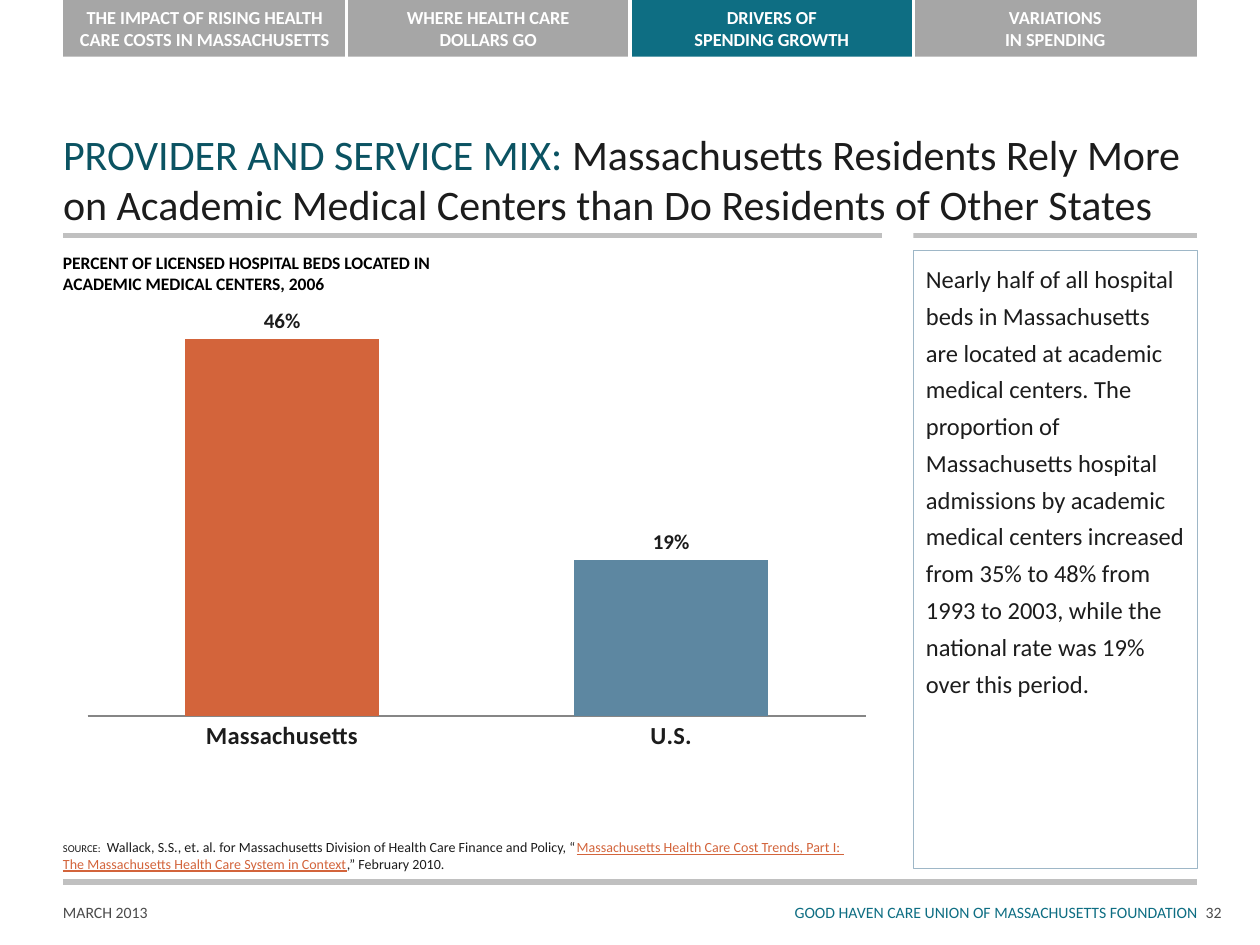
from dataclasses import dataclass
from typing import NamedTuple

from lxml.etree import SubElement
from pptx import Presentation
from pptx.chart.data import CategoryChartData
from pptx.dml.color import RGBColor
from pptx.enum.chart import XL_CHART_TYPE as ChartType, XL_LABEL_POSITION as LabelPosition
from pptx.enum.chart import XL_TICK_MARK as TickMark
from pptx.enum.shapes import MSO_CONNECTOR as Connector, MSO_SHAPE as Shape
from pptx.enum.text import MSO_ANCHOR as Anchor, MSO_AUTO_SIZE as AutoSize, PP_ALIGN as Align
from pptx.oxml.ns import qn
from pptx.util import Pt


class Box(NamedTuple):
    left: float
    top: float
    width: float
    height: float

    def lengths(self):
        return [Pt(value) for value in self]


@dataclass(frozen=True)
class Theme:
    font: str = "Calibri"
    ink: str = "1C1C1C"
    black: str = "000000"
    white: str = "FFFFFF"
    muted: str = "4B4B4B"
    tab: str = "A6A6A6"
    teal: str = "0E6E83"
    deep_teal: str = "0B5362"
    rule: str = "C0C0C0"
    note_border: str = "9EB7C7"
    axis: str = "868686"
    state: str = "D3643B"
    nation: str = "5D87A1"
    title_size: float = 24
    note_size: float = 14
    label_size: float = 12
    tab_size: float = 10.5
    caption_size: float = 10
    footer_size: float = 9
    source_size: float = 8
    source_tag_size: float = 6


THEME = Theme()


def rgb(value):
    return RGBColor.from_string(value)


def style_font(font, size, color, bold=False):
    font.name = THEME.font
    font.size = Pt(size)
    font.bold = bold
    font.color.rgb = rgb(color)


def add_run(paragraph, text, size, color, bold=False, underline=False):
    for index, line in enumerate(text.split("\n")):
        if index:
            paragraph.add_line_break()
        run = paragraph.add_run()
        run.text = line
        style_font(run.font, size, color, bold)
        if underline:
            run.font.underline = True


def set_frame(frame, horizontal=0, vertical=0, anchor=Anchor.TOP, wrap=True):
    frame.margin_left = frame.margin_right = Pt(horizontal)
    frame.margin_top = frame.margin_bottom = Pt(vertical)
    frame.vertical_anchor = anchor
    frame.word_wrap = wrap
    return frame.paragraphs[0]


def add_text(slide, box):
    return slide.shapes.add_textbox(*box.lengths()).text_frame


def add_panel(slide, box, fill=None, border=None):
    panel = slide.shapes.add_shape(Shape.RECTANGLE, *box.lengths())
    panel.shadow.inherit = False
    if fill:
        panel.fill.solid()
        panel.fill.fore_color.rgb = rgb(fill)
    else:
        panel.fill.background()
    if border:
        panel.line.color.rgb = rgb(border)
        panel.line.width = Pt(0.25)
    else:
        panel.line.fill.background()
    return panel.text_frame


def add_rule(slide, x1, y1, x2, y2, color, width):
    rule = slide.shapes.add_connector(Connector.STRAIGHT, Pt(x1), Pt(y1), Pt(x2), Pt(y2))
    rule.line.color.rgb = rgb(color)
    rule.line.width = Pt(width)
    SubElement(rule._element.spPr, qn("a:effectLst"))


def add_navigation(slide, box, sections, current):
    width = box.width / len(sections)
    for index, section in enumerate(sections):
        fill = THEME.teal if section == current else THEME.tab
        tab = add_panel(slide, Box(box.left + index * width, box.top, width, box.height), fill)
        paragraph = set_frame(tab, 3.6, 3.6, Anchor.BOTTOM)
        paragraph.alignment = Align.CENTER
        add_run(paragraph, section, THEME.tab_size, THEME.white, bold=True)
    for index in range(1, len(sections)):
        x = box.left + index * width
        add_rule(slide, x, box.top, x, box.top + box.height, THEME.white, 2)


def add_title(slide, box, topic, headline):
    title = slide.shapes.title
    title.left, title.top, title.width, title.height = box.lengths()
    paragraph = set_frame(title.text_frame, 0, 3.6, Anchor.BOTTOM)
    title.text_frame.auto_size = AutoSize.NONE
    paragraph.alignment = Align.LEFT
    add_run(paragraph, topic, THEME.title_size, THEME.deep_teal)
    add_run(paragraph, headline, THEME.title_size, THEME.ink)
    bottom = box.top + box.height
    add_rule(slide, box.left, bottom, box.left + box.width, bottom, THEME.rule, 3)


def add_footer(slide, box, date, publisher, number):
    add_rule(slide, box.left, box.top, box.left + box.width, box.top, THEME.rule, 3)
    top, right = box.top + 12, box.left + box.width
    parts = [
        (Box(box.left, top, 72, 23), date, THEME.muted, Align.LEFT),
        (Box(right - 310, top, 310, 23), publisher, THEME.teal, Align.RIGHT),
        (Box(right + 5, top, 31, 23), number, THEME.muted, Align.LEFT),
    ]
    for part, text, color, alignment in parts:
        paragraph = set_frame(add_text(slide, part))
        paragraph.alignment = alignment
        add_run(paragraph, text, THEME.footer_size, color)


def add_source(slide, box):
    frame = add_text(slide, box)
    paragraph = set_frame(frame, 0, 3.6, Anchor.BOTTOM)
    frame.auto_size = AutoSize.SHAPE_TO_FIT_TEXT
    size = THEME.source_size
    add_run(paragraph, "SOURCE", THEME.source_tag_size, THEME.ink)
    add_run(paragraph, ":", THEME.source_tag_size, THEME.black)
    add_run(paragraph, "  ", size, THEME.black)
    add_run(paragraph, "Wallack, S.S., et. al. for Massachusetts Division of Health Care Finance and Policy, “",
            size, THEME.ink)
    add_run(paragraph, "Massachusetts Health Care Cost Trends, Part I: \n"
            "The Massachusetts Health Care System in Context", size, THEME.state, underline=True)
    add_run(paragraph, ",” February 2010.", size, THEME.ink)


def add_note(slide, box, text):
    paragraph = set_frame(add_panel(slide, box, border=THEME.note_border), 7.2, 3.6)
    paragraph.alignment = Align.LEFT
    paragraph.line_spacing = Pt(21)
    add_run(paragraph, text, THEME.note_size, THEME.ink)


def add_bed_chart(slide, box, caption, shares):
    heading = set_frame(add_text(slide, Box(box.left, box.top, 247, 19.5)), 0, 3.6, wrap=False)
    add_run(heading, caption, THEME.caption_size, THEME.black, bold=True)

    data = CategoryChartData(number_format="0%")
    data.categories = list(shares)
    data.add_series("Share of beds", list(shares.values()))
    area = Box(box.left, box.top + 34.5, box.width, box.height - 34.5)
    chart = slide.shapes.add_chart(ChartType.COLUMN_CLUSTERED, *area.lengths(), data).chart
    chart.has_legend = chart.has_title = False
    style_font(chart.font, 18, THEME.ink)

    category_axis, value_axis = chart.category_axis, chart.value_axis
    category_axis.major_tick_mark = category_axis.minor_tick_mark = TickMark.NONE
    category_axis.format.line.color.rgb = rgb(THEME.axis)
    style_font(category_axis.tick_labels.font, THEME.note_size, THEME.ink, bold=True)
    value_axis.minimum_scale, value_axis.maximum_scale = 0, 0.5
    value_axis.has_major_gridlines = value_axis.visible = False

    plot = chart.plots[0]
    plot.gap_width, plot.overlap, plot.vary_by_categories = 100, 100, False
    beds = plot.series[0]
    for target, color in ((beds, THEME.nation), (beds.points[0], THEME.state)):
        target.format.fill.solid()
        target.format.fill.fore_color.rgb = rgb(color)
    labels = beds.data_labels
    labels.show_value = True
    labels.position = LabelPosition.OUTSIDE_END
    labels.number_format, labels.number_format_is_linked = "0%", False
    style_font(labels.font, THEME.label_size, THEME.ink, bold=True)

    plot_area = chart._chartSpace.chart.plotArea
    for old in plot_area.findall(qn("c:layout")):
        plot_area.remove(old)
    layout = SubElement(plot_area, qn("c:layout"))
    plot_area.insert(0, layout)
    manual = SubElement(layout, qn("c:manualLayout"))
    settings = {"layoutTarget": "inner", "xMode": "edge", "yMode": "edge",
                "x": 0.03, "y": 0, "w": 0.95, "h": 0.87}
    for tag, value in settings.items():
        SubElement(manual, qn(f"c:{tag}")).set("val", str(value))


def main():
    deck = Presentation()
    deck.slide_width, deck.slide_height = Pt(720), Pt(540)
    slide = deck.slides.add_slide(deck.slide_layouts[5])
    growth = "DRIVERS OF\nSPENDING GROWTH"
    sections = ["THE IMPACT OF RISING HEALTH CARE COSTS IN MASSACHUSETTS",
                "WHERE HEALTH CARE\nDOLLARS GO", growth, "VARIATIONS\nIN SPENDING"]
    add_navigation(slide, Box(36, 0, 648, 32.4), sections, growth)
    add_title(slide, Box(36, 72, 648, 62.64), "PROVIDER AND SERVICE MIX: ",
              "Massachusetts Residents Rely More on Academic Medical Centers "
              "than Do Residents of Other States")
    add_panel(slide, Box(504, 129, 18, 9), THEME.white)
    add_bed_chart(slide, Box(36, 140.4, 468, 303.8),
                  "PERCENT OF LICENSED HOSPITAL BEDS LOCATED IN ACADEMIC MEDICAL CENTERS, 2006",
                  {"Massachusetts": 0.46, "U.S.": 0.19})
    add_note(slide, Box(522, 143.2, 162, 353),
             "Nearly half of all hospital beds in Massachusetts are located at academic medical "
             "centers. The proportion of Massachusetts hospital admissions by academic medical "
             "centers increased from 35% to 48% from 1993 to 2003, while the national rate was "
             "19% over this period.")
    add_source(slide, Box(36, 475.2, 484, 26.8))
    add_footer(slide, Box(36, 504, 648, 36), "MARCH 2013",
               "GOOD HAVEN CARE UNION OF MASSACHUSETTS FOUNDATION", "32")
    deck.save("out.pptx")


if __name__ == "__main__":
    main()
